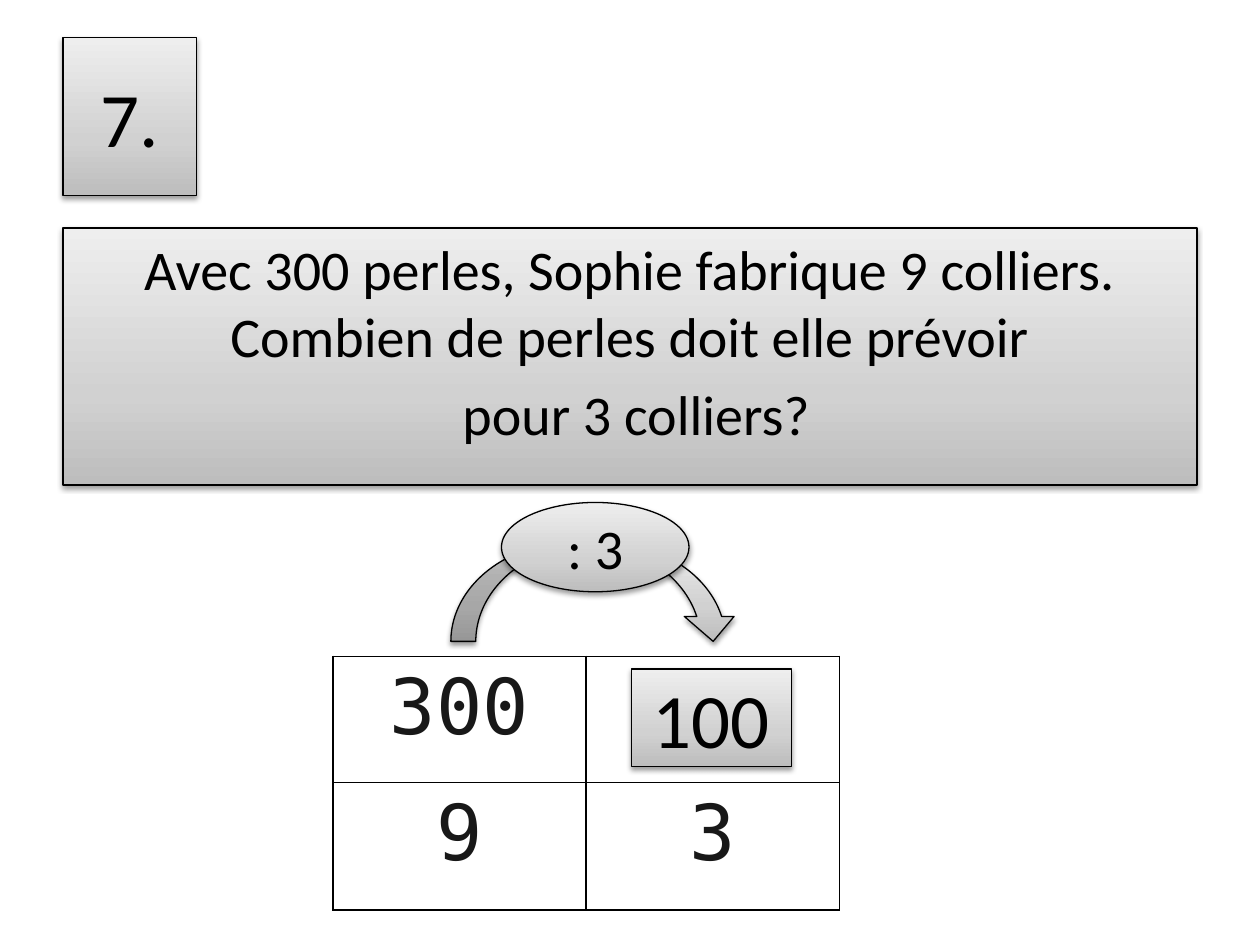
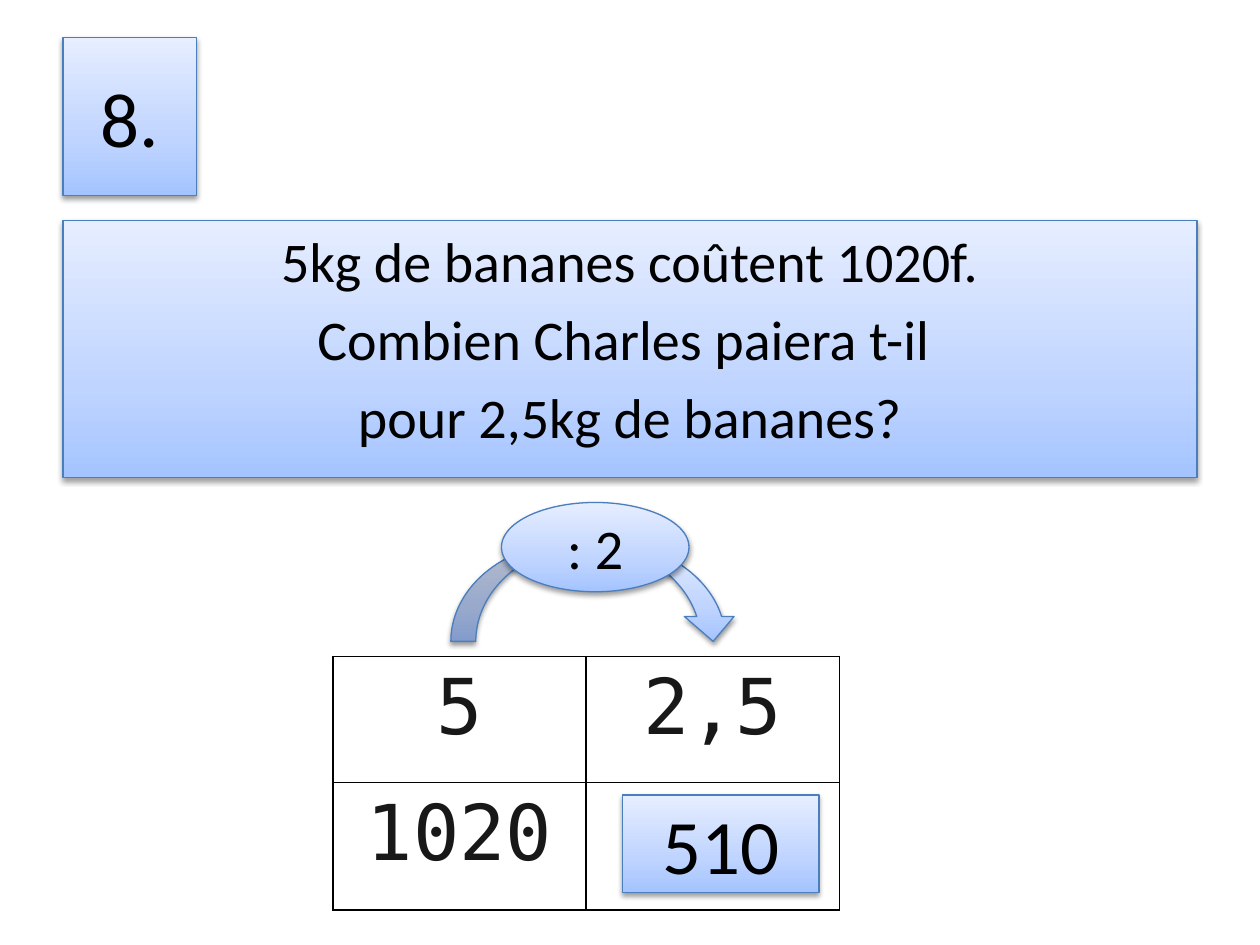
"""Build two proportionality exercises, each with its problem, table and answer."""
from copy import deepcopy
from dataclasses import dataclass

from lxml import etree
from pptx import Presentation
from pptx.dml.color import RGBColor
from pptx.enum.shapes import MSO_SHAPE
from pptx.enum.text import MSO_ANCHOR, MSO_AUTO_SIZE, PP_ALIGN
from pptx.oxml.ns import qn
from pptx.presentation import Presentation as Deck
from pptx.shapes.autoshape import Shape
from pptx.slide import Slide
from pptx.table import _Cell as Cell
from pptx.text.text import TextFrame
from pptx.util import Cm, Length, Pt

RECTANGLE = MSO_SHAPE.RECTANGLE
OVAL = MSO_SHAPE.OVAL
CURVED_ARROW = MSO_SHAPE.CURVED_DOWN_ARROW
CENTER = PP_ALIGN.CENTER
TOP = MSO_ANCHOR.TOP
MIDDLE = MSO_ANCHOR.MIDDLE
NO_AUTOFIT = MSO_AUTO_SIZE.NONE
TITLE_ONLY = 5


@dataclass(frozen=True)
class Palette:
    stops: tuple[str, str, str]
    outline: str


@dataclass(frozen=True)
class Theme:
    gray: Palette = Palette(("BDBDBD", "D1D1D1", "EEEEEE"), "000000")
    blue: Palette = Palette(("A4C4FF", "BFD4FF", "E6EEFF"), "4B7EBC")
    positions: tuple[float, float, float] = (0, 0.35, 1)
    ink: str = "000000"
    value_ink: str = "181818"
    paper: str = "FFFFFF"
    font: str = "Calibri"
    value_font: str = "DejaVu Sans Mono"
    large: Length = Pt(44)
    medium: Length = Pt(32)
    outline_width: Length = Pt(0.75)
    border_width: Length = Pt(1)
    paragraph_gap: Length = Pt(6)
    shadow_blur: Length = Pt(3.1)
    shadow_distance: Length = Pt(1.6)
    shadow_opacity: int = 38


THEME = Theme()


@dataclass(frozen=True)
class Box:
    left: float
    top: float
    width: float
    height: float

    def lengths(self) -> tuple[Length, ...]:
        return tuple(Cm(n) for n in (self.left, self.top, self.width, self.height))


NUMBER_BOX = Box(1.27, 0.76, 2.69, 3.18)
TABLE_BOX = Box(6.71, 13.23, 10.21, 5.11)
ARROW_BOX = Box(9.09, 10.92, 5.79, 2.01)
OPERATION_BOX = Box(10.11, 10.13, 3.78, 1.8)
ROW_HEIGHTS = (2.54, 2.57)
ANSWER_INSET = 0.26


@dataclass(frozen=True)
class Exercise:
    number: str
    problem: tuple[str, ...]
    problem_top: float
    values: tuple[tuple[str, str], tuple[str, str]]
    operation: str
    answer: str
    answer_row: int
    answer_left: float
    answer_width: float
    palette: Palette


EXERCISES = (
    Exercise(
        number="7.",
        problem=(
            "Avec 300 perles, Sophie fabrique 9 colliers. Combien de perles doit elle prévoir",
            " pour 3 colliers?",
        ),
        problem_top=4.6,
        values=(("300", ""), ("9", "3")),
        operation=": 3",
        answer="100",
        answer_row=0,
        answer_left=12.73,
        answer_width=3.23,
        palette=THEME.gray,
    ),
    Exercise(
        number="8.",
        problem=(
            "5kg de bananes coûtent 1020f.",
            "Combien Charles paiera t-il ",
            "pour 2,5kg de bananes?",
        ),
        problem_top=4.45,
        values=(("5", "2,5"), ("1020", "")),
        operation=": 2",
        answer="510",
        answer_row=1,
        answer_left=12.55,
        answer_width=3.96,
        palette=THEME.blue,
    ),
)


def write_text(
    frame: TextFrame,
    *paragraphs: str,
    size: Length = THEME.large,
    font: str = THEME.font,
    color: str = THEME.ink,
    anchor: MSO_ANCHOR = MIDDLE,
) -> None:
    frame.word_wrap = True
    frame.auto_size = NO_AUTOFIT
    frame.vertical_anchor = anchor
    for index, text in enumerate(paragraphs):
        paragraph = frame.add_paragraph() if index else frame.paragraphs[0]
        paragraph.alignment = CENTER
        paragraph.space_before = THEME.paragraph_gap if index else Pt(0)
        run = paragraph.add_run()
        run.text = text
        run.font.size = size
        run.font.name = font
        run.font.color.rgb = RGBColor.from_string(color)


def add_shadow(shape: Shape) -> None:
    shape.shadow.inherit = False
    effects = shape._element.spPr.find(qn("a:effectLst"))
    shadow = etree.SubElement(
        effects,
        qn("a:outerShdw"),
        blurRad=str(THEME.shadow_blur),
        dist=str(THEME.shadow_distance),
        dir="5400000",
        rotWithShape="0",
    )
    black = etree.SubElement(shadow, qn("a:srgbClr"), val=THEME.ink)
    etree.SubElement(black, qn("a:alpha"), val=str(THEME.shadow_opacity * 1000))


def style_shape(shape: Shape, palette: Palette) -> None:
    shape.fill.gradient()
    shape.fill.gradient_angle = 90
    stop_list = shape._element.spPr.find(".//" + qn("a:gsLst"))
    stop_list.append(deepcopy(stop_list[-1]))
    for stop, color, position in zip(
        shape.fill.gradient_stops, palette.stops, THEME.positions
    ):
        stop.color.rgb = RGBColor.from_string(color)
        stop.position = position
    shape.line.color.rgb = RGBColor.from_string(palette.outline)
    shape.line.width = THEME.outline_width
    add_shadow(shape)


def add_number(slide: Slide, exercise: Exercise) -> None:
    number = slide.shapes.title
    number.left, number.top, number.width, number.height = NUMBER_BOX.lengths()
    style_shape(number, exercise.palette)
    write_text(number.text_frame, exercise.number)


def add_problem(slide: Slide, exercise: Exercise) -> None:
    box = Box(NUMBER_BOX.left, exercise.problem_top, 22.86, 5.18)
    problem = slide.shapes.add_shape(RECTANGLE, *box.lengths())
    style_shape(problem, exercise.palette)
    write_text(
        problem.text_frame, *exercise.problem, size=THEME.medium, anchor=TOP
    )


def add_borders(cell: Cell) -> None:
    properties = cell._tc.get_or_add_tcPr()
    for index, side in enumerate(("lnL", "lnR", "lnT", "lnB")):
        border = etree.Element(qn(f"a:{side}"), w=str(THEME.border_width))
        fill = etree.SubElement(border, qn("a:solidFill"))
        etree.SubElement(fill, qn("a:srgbClr"), val=THEME.ink)
        properties.insert(index, border)


def add_values(slide: Slide, exercise: Exercise) -> None:
    table = slide.shapes.add_table(2, 2, *TABLE_BOX.lengths()).table
    table.first_row = False
    table.horz_banding = False
    for column in table.columns:
        column.width = Cm(TABLE_BOX.width / 2)
    for row, height, values in zip(table.rows, ROW_HEIGHTS, exercise.values):
        row.height = Cm(height)
        for cell, value in zip(row.cells, values):
            cell.fill.solid()
            cell.fill.fore_color.rgb = RGBColor.from_string(THEME.paper)
            add_borders(cell)
            if value:
                write_text(
                    cell.text_frame,
                    value,
                    font=THEME.value_font,
                    color=THEME.value_ink,
                    anchor=TOP,
                )


def add_operation(slide: Slide, exercise: Exercise) -> None:
    group = slide.shapes.add_group_shape()
    arrow = group.shapes.add_shape(CURVED_ARROW, *ARROW_BOX.lengths())
    operation = group.shapes.add_shape(OVAL, *OPERATION_BOX.lengths())
    for part in (arrow, operation):
        style_shape(part, exercise.palette)
    write_text(operation.text_frame, exercise.operation, size=THEME.medium)


def add_answer(slide: Slide, exercise: Exercise) -> None:
    top = TABLE_BOX.top + sum(ROW_HEIGHTS[: exercise.answer_row]) + ANSWER_INSET
    box = Box(exercise.answer_left, top, exercise.answer_width, 1.96)
    answer = slide.shapes.add_shape(RECTANGLE, *box.lengths())
    style_shape(answer, exercise.palette)
    write_text(answer.text_frame, exercise.answer)


def add_exercise(deck: Deck, exercise: Exercise) -> None:
    slide = deck.slides.add_slide(deck.slide_layouts[TITLE_ONLY])
    for add_part in (add_number, add_problem, add_values, add_operation, add_answer):
        add_part(slide, exercise)


def main() -> None:
    deck = Presentation()
    deck.slide_width, deck.slide_height = Cm(25.4), Cm(19.05)
    for exercise in EXERCISES:
        add_exercise(deck, exercise)
    deck.save("out.pptx")


if __name__ == "__main__":
    main()
